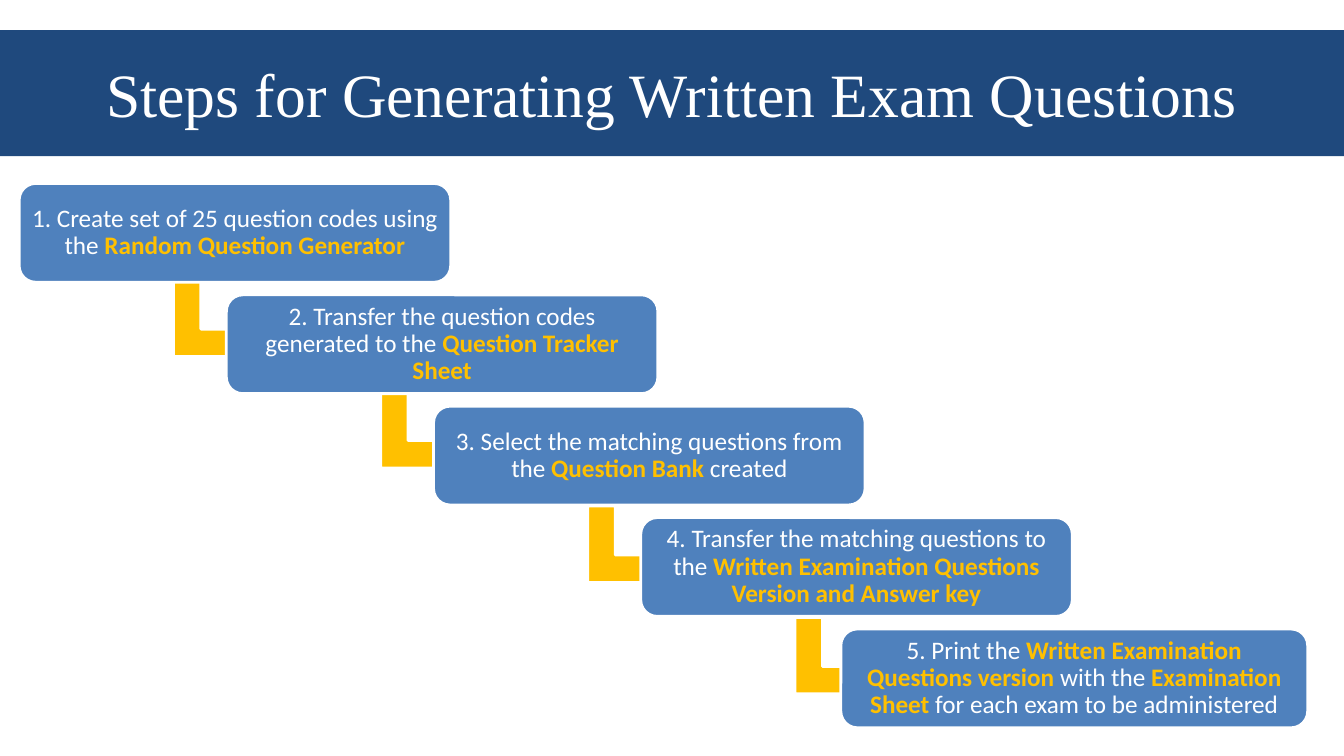
from pptx import Presentation
from pptx.dml.color import RGBColor
from pptx.enum import shapes, text
from pptx.util import Inches, Pt

COLORS = {"banner": "1F497D", "step": "4F81BD", "accent": "FFC000", "white": "FFFFFF"}
STEP_RIGHT, STEP_DOWN = 2.055, 1.105
STEP_HEIGHT = 0.98

# Left, width, drop of the arrow below the step's top, then plain and
# highlighted wording in turn
STEPS = [
    (0.19, 4.28, 0.9, ["1. Create set of 25 question codes using the ",
                       "Random Question Generator"]),
    (0.19 + STEP_RIGHT, 4.28, 0.9, ["2. Transfer the question codes generated to the ",
                                    "Question Tracker Sheet"]),
    (0.19 + 2 * STEP_RIGHT, 4.28, 0.93, ["3. Select the matching questions from the ",
                                         "Question Bank ", "created"]),
    (0.19 + 3 * STEP_RIGHT, 4.28, 0.93, ["4. Transfer the matching questions to the ",
                                         "Written Examination Questions Version and Answer key"]),
    (8.34, 4.63, None, ["5. Print the ", "Written Examination Questions version ",
                        "with the ", "Examination Sheet ",
                        "for each exam to be administered"]),
]

prs = Presentation()
prs.slide_width, prs.slide_height = Inches(13.33), Inches(7.5)
slide = prs.slides.add_slide(prs.slide_layouts[6])


def add_block(kind, left, top, width, height, fill, outlined=True):
    block = slide.shapes.add_shape(kind, Inches(left), Inches(top), Inches(width), Inches(height))
    block.shadow.inherit = False
    block.fill.solid()
    block.fill.fore_color.rgb = RGBColor.from_string(COLORS[fill])
    if outlined:
        block.line.color.rgb = RGBColor.from_string(COLORS["white"])
        block.line.width = Pt(2)
    else:
        block.line.fill.background()
    return block


def style_paragraph(block, font_name, size):
    block.text_frame.word_wrap = True
    block.text_frame.vertical_anchor = text.MSO_ANCHOR.MIDDLE
    paragraph = block.text_frame.paragraphs[0]
    paragraph.alignment = text.PP_ALIGN.CENTER
    paragraph.font.name = font_name
    paragraph.font.size = Pt(size)
    paragraph.font.color.rgb = RGBColor.from_string(COLORS["white"])
    return paragraph


# Title banner
banner = add_block(shapes.MSO_SHAPE.RECTANGLE, 0, 0.3, 13.33, 1.25, "banner", outlined=False)
title = style_paragraph(banner, "Times New Roman", 44)
title.add_run().text = "Steps for Generating Written Exam Questions"

# Staircase of steps, each arrow tucked behind its step and the next one
for index, (left, width, arrow_drop, wording) in enumerate(STEPS):
    top = 1.82 + index * STEP_DOWN
    if arrow_drop is not None:
        arrow = add_block(shapes.MSO_SHAPE.BENT_UP_ARROW, left + 1.59, top + arrow_drop,
                          0.83, 0.95, "accent")
        arrow.rotation = 90
        for position, value in enumerate((0.328, 0.25, 0.358)):
            arrow.adjustments[position] = value

    step = add_block(shapes.MSO_SHAPE.ROUNDED_RECTANGLE, left, top, width, STEP_HEIGHT, "step")
    frame = step.text_frame
    frame.margin_left = frame.margin_right = Inches(0.07)
    frame.margin_top = frame.margin_bottom = Inches(0.07)
    instruction = style_paragraph(step, "Calibri", 18)
    instruction.line_spacing = 0.9
    for position, words in enumerate(wording):
        highlighted = position % 2 == 1
        run = instruction.add_run()
        run.text = words
        run.font.bold = highlighted
        run.font.color.rgb = RGBColor.from_string(COLORS["accent" if highlighted else "white"])

prs.save("out.pptx")
